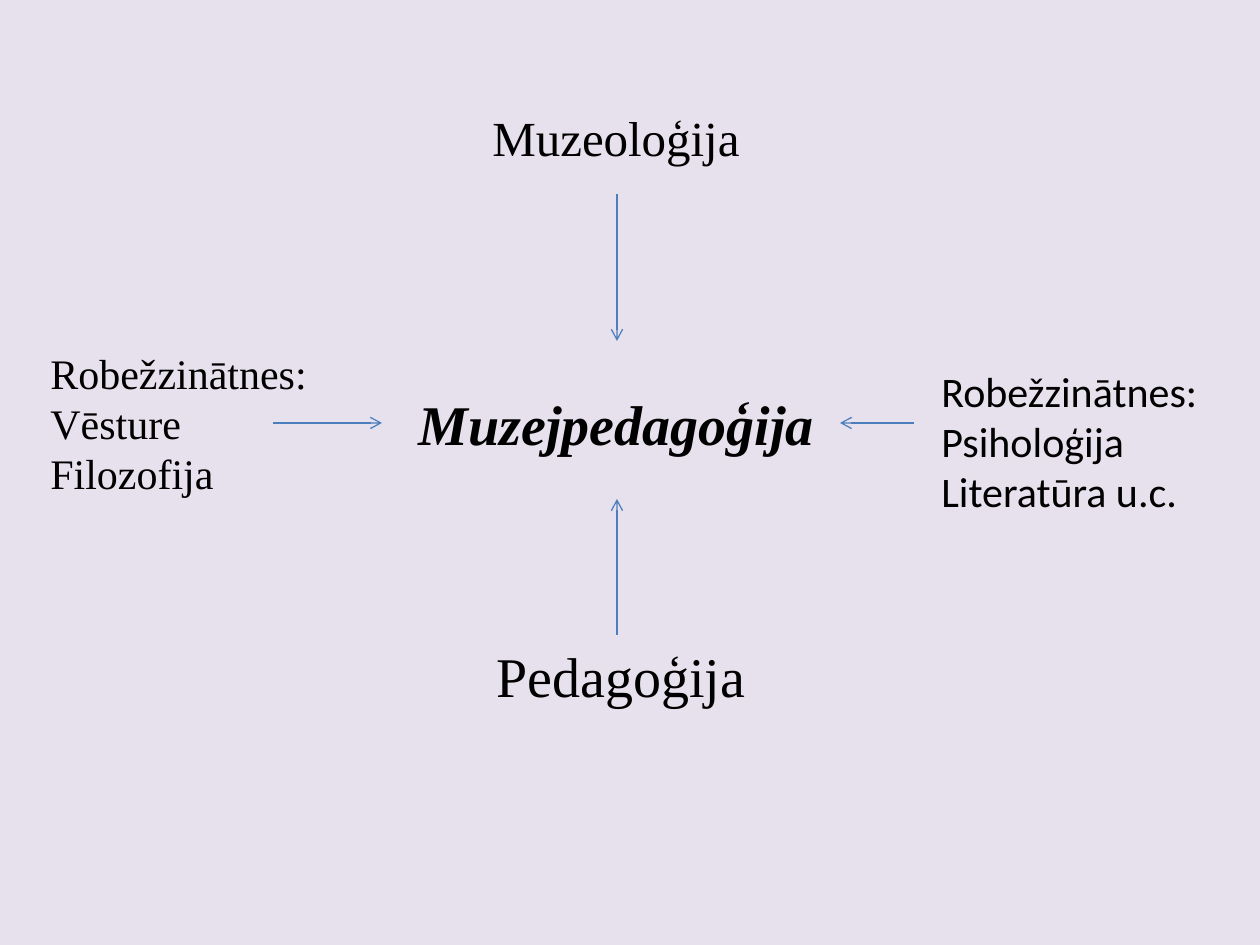
"""Build a slide of the fields that feed into museum pedagogy."""
from dataclasses import dataclass

import lxml.etree
import pptx
import pptx.dml.color
import pptx.enum.shapes
import pptx.enum.text
import pptx.oxml.ns
import pptx.util


@dataclass(frozen=True)
class Theme:
    background: str = "E7E1ED"
    ink: str = "000000"
    arrow: str = "4B7EBC"
    serif: str = "Times New Roman"
    sans: str = "Calibri"
    large: int = 32
    medium: int = 28
    small: int = 24
    arrow_width: float = 0.75


THEME = Theme()
PX = 914400 // 126
SLIDE_SIZE = (1260, 945)
AXIS_X, AXIS_Y = 617, 423

CORE = ("Muzejpedagoģija", (406, 383, 423, 81), THEME.serif, THEME.large)
FIELDS = [
    ("Robežzinātnes:\vVēsture\nFilozofija", (38, 341, 315, 165), THEME.serif, THEME.small),
    ("Robežzinātnes:\nPsiholoģija\nLiteratūra u.c.", (929, 359, 318, 165), THEME.sans, THEME.small),
    ("Pedagoģija", (484, 635, 312, 81), THEME.serif, THEME.large),
    ("Muzeoloģija", (480, 101, 275, 72), THEME.serif, THEME.medium),
]
ARROWS = [
    ((AXIS_X, 194), (AXIS_X, 341)),
    ((273, AXIS_Y), (382, AXIS_Y)),
    ((914, AXIS_Y), (840, AXIS_Y)),
    ((AXIS_X, 635), (AXIS_X, 499)),
]


def emu(lengths):
    return [length * PX for length in lengths]


def rgb(value):
    return pptx.dml.color.RGBColor.from_string(value)


def write(label, text, box, font_name, size, emphasis=False):
    label.left, label.top, label.width, label.height = emu(box)
    frame = label.text_frame
    frame.text = text
    frame.word_wrap = True
    frame.auto_size = pptx.enum.text.MSO_AUTO_SIZE.SHAPE_TO_FIT_TEXT
    frame.vertical_anchor = pptx.enum.text.MSO_ANCHOR.TOP
    for paragraph in frame.paragraphs:
        paragraph.alignment = pptx.enum.text.PP_ALIGN.LEFT
        for run in paragraph.runs:
            run.font.name = font_name
            run.font.size = pptx.util.Pt(size)
            run.font.color.rgb = rgb(THEME.ink)
            run.font.bold = run.font.italic = emphasis


def add_arrow(slide, start, end):
    arrow = slide.shapes.add_connector(
        pptx.enum.shapes.MSO_CONNECTOR.STRAIGHT, *emu(start + end))
    arrow.line.color.rgb = rgb(THEME.arrow)
    arrow.line.width = pptx.util.Pt(THEME.arrow_width)
    qn = pptx.oxml.ns.qn
    lxml.etree.SubElement(arrow.line._get_or_add_ln(), qn("a:tailEnd"), type="arrow")
    lxml.etree.SubElement(arrow._element.spPr, qn("a:effectLst"))


def main():
    deck = pptx.Presentation()
    deck.slide_width, deck.slide_height = emu(SLIDE_SIZE)
    slide = deck.slides.add_slide(deck.slide_layouts.get_by_name("Title Only"))
    slide.background.fill.solid()
    slide.background.fill.fore_color.rgb = rgb(THEME.background)

    for start, end in ARROWS:
        add_arrow(slide, start, end)
    write(slide.shapes.title, *CORE, emphasis=True)
    for field in FIELDS:
        write(slide.shapes.add_textbox(0, 0, 0, 0), *field)

    deck.save("out.pptx")


if __name__ == "__main__":
    main()
